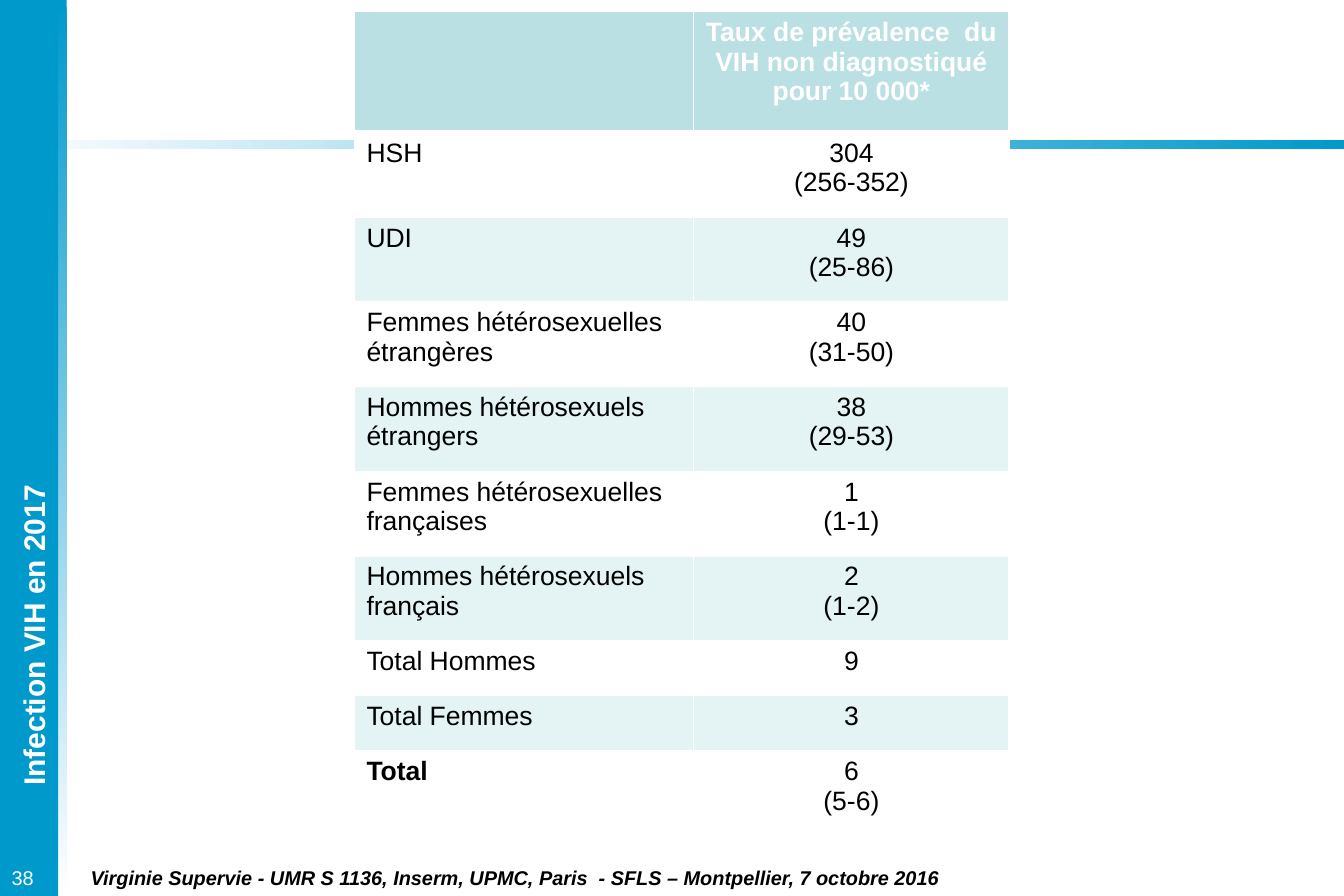
from lxml.etree import SubElement
from pptx import Presentation
from pptx.dml.color import RGBColor
from pptx.enum.shapes import MSO_SHAPE
from pptx.enum.text import PP_ALIGN
from pptx.oxml.ns import qn
from pptx.util import Cm, Pt

BLUE, WHITE, BLACK = "0099CC", "FFFFFF", "000000"
HEADER_FILL, BAND_FILL = "BBE0E3", "E4F3F4"
SLIDE_WIDTH, SLIDE_HEIGHT = 28.58, 19.05
HEADER_HEIGHT, TWO_LINES, ONE_LINE = 2.57, 1.8, 1.17

PREVALENCE = [
    ("", "Taux de prévalence  du VIH non diagnostiqué pour 10 000*", HEADER_HEIGHT),
    ("HSH", "304\n(256-352)", TWO_LINES),
    ("UDI", "49\n(25-86)", TWO_LINES),
    ("Femmes hétérosexuelles étrangères", "40\n(31-50)", TWO_LINES),
    ("Hommes hétérosexuels étrangers", "38\n(29-53)", TWO_LINES),
    ("Femmes hétérosexuelles françaises", "1\n(1-1)", TWO_LINES),
    ("Hommes hétérosexuels français", "2\n(1-2)", TWO_LINES),
    ("Total Hommes", "9", ONE_LINE),
    ("Total Femmes", "3", ONE_LINE),
    ("Total", "6\n(5-6)", TWO_LINES),
]


def color(hex_value):
    return RGBColor.from_string(hex_value)


def style_paragraphs(frame, size, hex_value, bold=False, italic=False,
                     align=PP_ALIGN.LEFT):
    for paragraph in frame.paragraphs:
        paragraph.alignment = align
        font = paragraph.font
        font.name, font.size = "Arial", Pt(size)
        font.bold, font.italic = bold, italic
        font.color.rgb = color(hex_value)


def add_band(slide, left, top, width, height, stops, angle=0):
    """Borderless rectangle: one colour, or a gradient between two."""
    band = slide.shapes.add_shape(MSO_SHAPE.RECTANGLE, Cm(left), Cm(top),
                                  Cm(width), Cm(height))
    band.shadow.inherit = False
    band.line.fill.background()
    if len(stops) == 1:
        band.fill.solid()
        band.fill.fore_color.rgb = color(stops[0])
        return
    band.fill.gradient()
    band.fill.gradient_angle = angle
    for stop, hex_value in zip(band.fill.gradient_stops, stops):
        stop.color.rgb = color(hex_value)


def add_label(slide, left, top, width, height, text, size, hex_value,
              rotation=0, wrap=True, **style):
    label = slide.shapes.add_textbox(Cm(left), Cm(top), Cm(width), Cm(height))
    label.rotation = rotation
    label.text_frame.word_wrap = wrap
    label.text_frame.text = text
    style_paragraphs(label.text_frame, size, hex_value, **style)


def set_borders(cell, top, bottom):
    """White cell borders, widths in points."""
    properties = cell._tc.get_or_add_tcPr()
    for side, width in (("L", 1), ("R", 1), ("T", top), ("B", bottom)):
        line = SubElement(properties, qn(f"a:ln{side}"), w=str(Pt(width)))
        fill = SubElement(line, qn("a:solidFill"))
        SubElement(fill, qn("a:srgbClr"), val=WHITE)


def add_prevalence_table(slide, left, top, widths):
    heights = [height for *_, height in PREVALENCE]
    table = slide.shapes.add_table(len(PREVALENCE), len(widths), Cm(left), Cm(top),
                                   Cm(sum(widths)), Cm(sum(heights))).table
    for column, width in zip(table.columns, widths):
        column.width = Cm(width)
    for r, (group, rate, height) in enumerate(PREVALENCE):
        table.rows[r].height = Cm(height)
        header = r == 0
        band_fill = HEADER_FILL if header else WHITE if r % 2 else BAND_FILL
        for c, text in enumerate((group, rate)):
            cell = table.cell(r, c)
            cell.text = text
            style_paragraphs(cell.text_frame, 16, WHITE if header else BLACK,
                             bold=header or text == "Total",
                             align=PP_ALIGN.CENTER if c else PP_ALIGN.LEFT)
            set_borders(cell, 3 if r == 1 else 1, 3 if header else 1)
            cell.fill.solid()
            cell.fill.fore_color.rgb = color(band_fill)


def main():
    deck = Presentation()
    deck.slide_width, deck.slide_height = Cm(SLIDE_WIDTH), Cm(SLIDE_HEIGHT)
    slide = deck.slides.add_slide(deck.slide_layouts[6])

    # Title rule and side bar
    add_band(slide, 0, 2.97, SLIDE_WIDTH, 0.2, (WHITE, BLUE))
    add_band(slide, 0.18, 0, 1.24, SLIDE_HEIGHT, (BLUE, WHITE), angle=270)
    add_band(slide, 0, 0, 1.24, SLIDE_HEIGHT, (BLUE,))

    # Side title and slide number
    add_label(slide, -2.77, 13, 6.96, 1.02, "Infection VIH en 2017", 18, WHITE,
              rotation=270, wrap=False, bold=True, align=PP_ALIGN.CENTER)
    add_label(slide, 0, 18.29, 1.6, 0.76, "38", 12, WHITE)

    # Prevalence by group
    add_prevalence_table(slide, 7.54, 0.25, (7.21, 6.71))

    # Source
    add_label(slide, 1.68, 18.29, 25.3, 0.76,
              "Virginie Supervie - UMR S 1136, Inserm, UPMC, Paris  - SFLS – "
              "Montpellier, 7 octobre 2016", 12, BLACK, bold=True, italic=True)

    deck.save("out.pptx")


if __name__ == "__main__":
    main()
